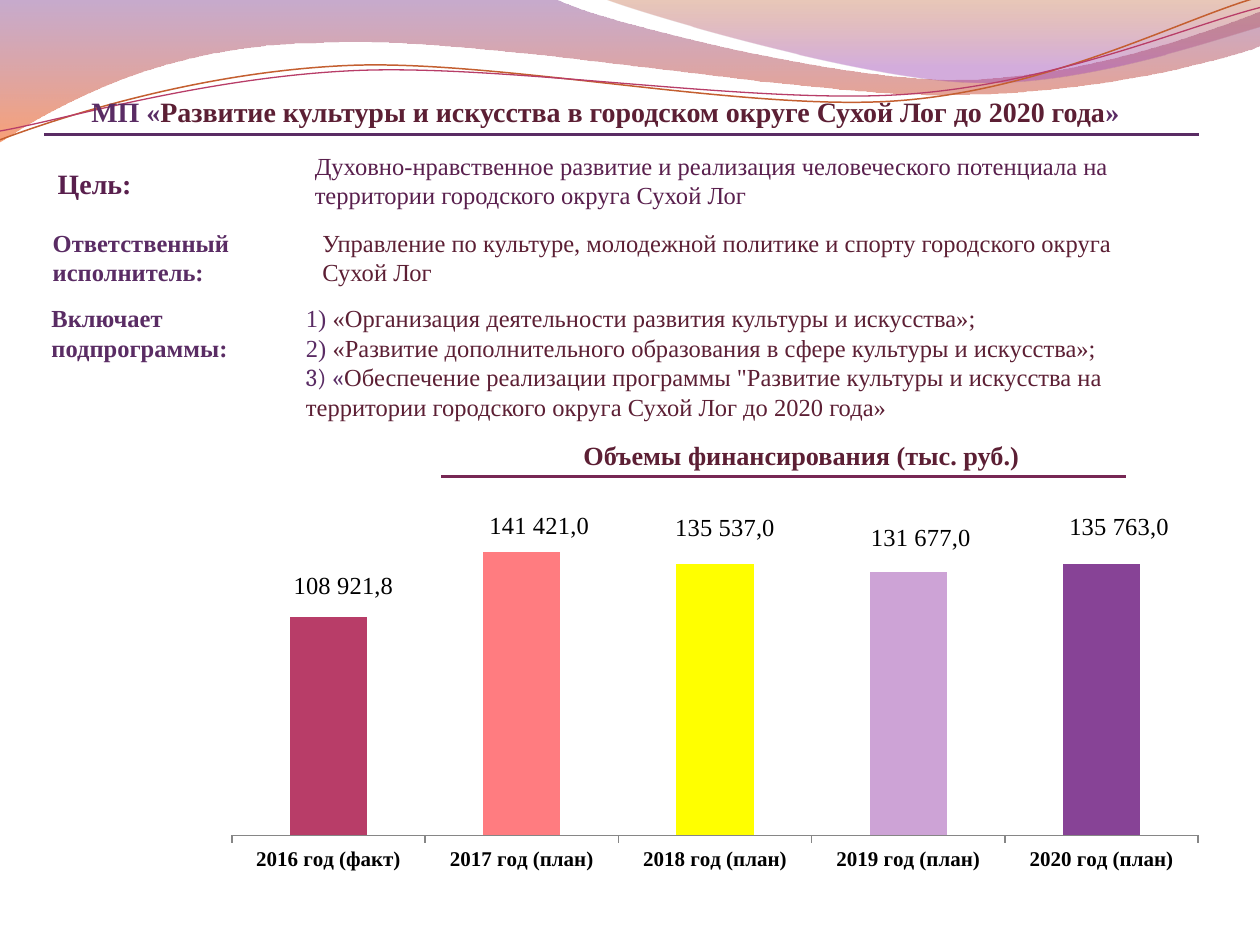
import lxml.etree
import pptx
import pptx.chart.data
import pptx.dml.color
import pptx.enum.chart
import pptx.enum.shapes
import pptx.enum.text
import pptx.oxml
import pptx.oxml.ns
import pptx.util

Inches, Pt = pptx.util.Inches, pptx.util.Pt
qn = pptx.oxml.ns.qn

THEME = {
    "font": "Times New Roman", "alt_font": "Cambria",
    "violet": "5A2C64", "plum": "591F4D", "wine": "5C1F34",
    "rule": "772754", "axis": "868686", "text": "000000",
    "title": 16, "body": 14, "chart_title": 15, "axis_size": 12,
}

# Waves: start point, then 2 values for a line or 6 for a Bezier curve
WAVES = [
    {"start": (0, -0.01), "closed": True,
     "steps": [(4.4, -0.01), (4.76, 0.17, 6.64, 0.63, 7.58, 0.63),
               (8.53, 0.63, 9.58, 0.26, 10, 0.09), (10.01, 0.36),
               (9.83, 0.44, 8.7, 0.76, 7.46, 0.75),
               (6.22, 0.75, 3.82, 0.28, 2.57, 0.34),
               (1.29, 0.35, 0.46, 0.83, -0.01, 1.13), (0, -0.01)],
     "stops": [(0, "834591", 45), (100, "F35307", 55)]},
    {"start": (4.79, -0.01), "closed": True,
     "steps": [(5.09, 0.11, 6.82, 0.62, 7.69, 0.65),
               (8.56, 0.69, 9.61, 0.32, 10, 0.21), (10, 0), (4.79, -0.01)],
     "stops": [(0, "B74915", 30), (80, "A14BB4", 45)]},
    {"start": (0, 1.11), "closed": False,
     "steps": [(0.48, 0.93, 1.58, 0.57, 2.77, 0.52),
               (3.95, 0.47, 5.93, 0.89, 7.13, 0.8),
               (8.33, 0.71, 9.38, 0.15, 9.98, -0.02)],
     "line": ("C45F30", 0.85)},
    {"start": (0, 1.04), "closed": False,
     "steps": [(0.47, 0.96, 1.64, 0.61, 2.83, 0.56),
               (4.03, 0.51, 5.97, 0.83, 7.17, 0.75),
               (8.36, 0.67, 9.41, 0.21, 10, 0.06)],
     "line": ("B83D68", 0.75)},
]

# Text boxes: place, size, bold, centred, paragraphs of (text, colour[, font])
TEXTS = [
    ((0.59, 0.7, 8.43, 0.37), "title", True, True, [[
        ("МП «", "violet"),
        ("Развитие культуры и искусства в городском округе Сухой Лог до 2020 года", "wine"),
        ("»", "violet")]]),
    ((2.4, 1.15, 6.93, 0.57), "body", False, False, [[
        ("Духовно-нравственное развитие и реализация человеческого потенциала на "
         "территории городского округа Сухой Лог", "plum")]]),
    ((0.36, 1.27, 1.18, 0.37), "title", True, False, [[("Цель:", "plum")]]),
    ((0.32, 1.76, 1.81, 0.57), "body", True, False,
     [[("Ответственный исполнитель:", "violet")]]),
    ((2.46, 1.76, 6.82, 0.57), "body", False, False, [[
        ("Управление по культуре, молодежной политике и спорту городского округа "
         "Сухой Лог", "wine")]]),
    ((0.31, 2.36, 2.01, 0.57), "body", True, False,
     [[("Включает подпрограммы:", "violet")]]),
    ((2.33, 2.36, 7.04, 1.04), "body", False, False, [
        [("1) ", "violet"),
         ("«Организация деятельности развития культуры и искусства»;", "wine")],
        [("2) ", "violet"),
         ("«Развитие дополнительного образования в сфере культуры и искусства»;", "wine")],
        [("3) «", "violet", "alt_font"),
         ('Обеспечение реализации программы "Развитие культуры и искусства на '
          'территории городского округа Сухой Лог до 2020 года»', "wine")]]),
    ((4, 3.44, 4.72, 0.35), "chart_title", True, True,
     [[("Объемы финансирования (тыс. руб.)", "wine")]]),
]

RULES = [((0.35, 9.52), 1.07, "violet"), ((3.5, 8.94), 3.78, "rule")]

# Year, value, bar colour, label shift in inches
FUNDING = [
    ("2016 год (факт)", 108921.8, "B83D68", (0.12, -0.1)),
    ("2017 год (план)", 141421, "FF7C80", (0.14, -0.06)),
    ("2018 год (план)", 135537, "FFFF00", (0.08, -0.14)),
    ("2019 год (план)", 131677, "CDA3D6", (0.1, -0.12)),
    ("2020 год (план)", 135763, "874396", (0.14, -0.14)),
]
CHART_BOX = (0.51, 3.12, 9.2, 4.09)
PLOT = {"x": 1.33, "y": 0.97, "w": 7.67, "h": 2.54}


def rgb(name):
    return pptx.dml.color.RGBColor.from_string(THEME.get(name, name))


def style(font, size, bold=False, color="text", face="font"):
    font.name, font.size, font.bold = THEME[face], Pt(THEME[size]), bold
    font.color.rgb = rgb(color)


def bend(shape, steps, origin, scale):
    """Turn the straight segments that have control points into Bezier curves."""
    segments = list(shape._element.iter(qn("a:lnTo")))
    for segment, step in zip(segments, steps):
        if len(step) == 2:
            continue
        segment.tag = qn("a:cubicBezTo")
        for index, pair in enumerate((step[:2], step[2:4])):
            x, y = (round((value - low) * scale) for value, low in zip(pair, origin))
            segment.insert(index, lxml.etree.Element(qn("a:pt"), x=str(x), y=str(y)))


def set_gradient(shape, stops):
    """Give the shape a top-to-bottom gradient with see-through stops."""
    shape.fill.gradient()
    gradient = shape.fill._xPr.find(qn("a:gradFill"))
    stop_list = gradient.find(qn("a:gsLst"))
    for old in list(stop_list):
        stop_list.remove(old)
    for place, color, opacity in stops:
        stop = lxml.etree.SubElement(stop_list, qn("a:gs"), pos=str(place * 1000))
        tint = lxml.etree.SubElement(stop, qn("a:srgbClr"), val=color)
        lxml.etree.SubElement(tint, qn("a:alpha"), val=str(opacity * 1000))
    gradient.find(qn("a:lin")).set("ang", "5400000")


def add_wave(page, wave):
    scale = 100
    anchors = [wave["start"]] + [step[-2:] for step in wave["steps"]]
    points = [(round(x * scale), round(y * scale)) for x, y in anchors]
    builder = page.shapes.build_freeform(*points[0], scale=Inches(1) / scale)
    builder.add_line_segments(points[1:], close=wave["closed"])
    shape = builder.convert_to_shape()
    bend(shape, wave["steps"], [min(axis) for axis in zip(*anchors)], scale)
    shape.shadow.inherit = False
    if wave["closed"]:
        set_gradient(shape, wave["stops"])
        shape.line.fill.background()
    else:
        color, width = wave["line"]
        shape.fill.background()
        shape.line.color.rgb, shape.line.width = rgb(color), Pt(width)


def add_text(page, place, size, bold, centred, paragraphs):
    frame = page.shapes.add_textbox(*map(Inches, place)).text_frame
    frame.word_wrap = True
    for index, runs in enumerate(paragraphs):
        para = frame.add_paragraph() if index else frame.paragraphs[0]
        if centred:
            para.alignment = pptx.enum.text.PP_ALIGN.CENTER
        for text, *look in runs:
            span = para.add_run()
            span.text = text
            style(span.font, size, bold, *look)


def add_rule(page, ends, top, color):
    left, right = ends
    rule = page.shapes.add_connector(pptx.enum.shapes.MSO_CONNECTOR.STRAIGHT,
                                     *map(Inches, (left, top, right, top)))
    rule.line.color.rgb, rule.line.width = rgb(color), Pt(1.5)
    lxml.etree.SubElement(rule._element.spPr, qn("a:effectLst"))


def make_layout(lengths, inner=False):
    """Build a manual layout, turning inches into shares of the chart."""
    layout = lxml.etree.Element(qn("c:layout"))
    manual = lxml.etree.SubElement(layout, qn("c:manualLayout"))
    if inner:
        lxml.etree.SubElement(manual, qn("c:layoutTarget"), val="inner")
        for key in "xy":
            lxml.etree.SubElement(manual, qn(f"c:{key}Mode"), val="edge")
    for key, length in lengths.items():
        whole = CHART_BOX[2] if key in "xw" else CHART_BOX[3]
        lxml.etree.SubElement(manual, qn(f"c:{key}"), val=f"{length / whole:.4f}")
    return layout


def add_funding_chart(page):
    kinds = pptx.enum.chart
    data = pptx.chart.data.CategoryChartData()
    data.categories = [row[0] for row in FUNDING]
    data.add_series("Series 1", [row[1] for row in FUNDING])
    chart = page.shapes.add_chart(kinds.XL_CHART_TYPE.COLUMN_CLUSTERED,
                                  *map(Inches, CHART_BOX), data).chart
    chart.has_legend = chart.has_title = False
    style(chart.font, "body")

    years, amounts = chart.category_axis, chart.value_axis
    style(years.tick_labels.font, "axis_size", True)
    years.format.line.color.rgb = rgb("axis")
    years.major_tick_mark = kinds.XL_TICK_MARK.OUTSIDE
    amounts.visible = amounts.has_major_gridlines = False
    amounts.minimum_scale, amounts.maximum_scale = 0, 160000

    plot = chart.plots[0]
    plot.gap_width, plot.vary_by_categories = 150, False
    series = plot.series[0]
    labels = series.data_labels
    labels.show_value = True
    labels.number_format, labels.number_format_is_linked = "0.0", False
    style(labels.font, "body", True)
    for leader in labels._element.findall(qn("c:showLeaderLines")):
        leader.set("val", "0")
    for index, (_, value, color, (dx, dy)) in enumerate(FUNDING):
        point = series.points[index]
        point.format.fill.solid()
        point.format.fill.fore_color.rgb = rgb(color)
        label = point.data_label
        span = label.text_frame.paragraphs[0].add_run()
        span.text = f"{value:,.1f}".replace(",", " ").replace(".", ",")
        style(span.font, "body")
        label.position = kinds.XL_LABEL_POSITION.OUTSIDE_END
        label._dLbl.insert(1, make_layout({"x": dx, "y": dy}))

    area = chart._chartSpace.chart.plotArea
    for old in area.findall(qn("c:layout")):
        area.remove(old)
    area.insert(0, make_layout(PLOT, inner=True))


def main():
    deck = pptx.Presentation()
    deck.slide_width, deck.slide_height = Inches(10), Inches(7.5)
    page = deck.slides.add_slide(deck.slide_layouts[6])
    for wave in WAVES:
        add_wave(page, wave)
    for text in TEXTS:
        add_text(page, *text)
    for rule in RULES:
        add_rule(page, *rule)
    add_funding_chart(page)
    deck.save("out.pptx")


if __name__ == "__main__":
    main()
